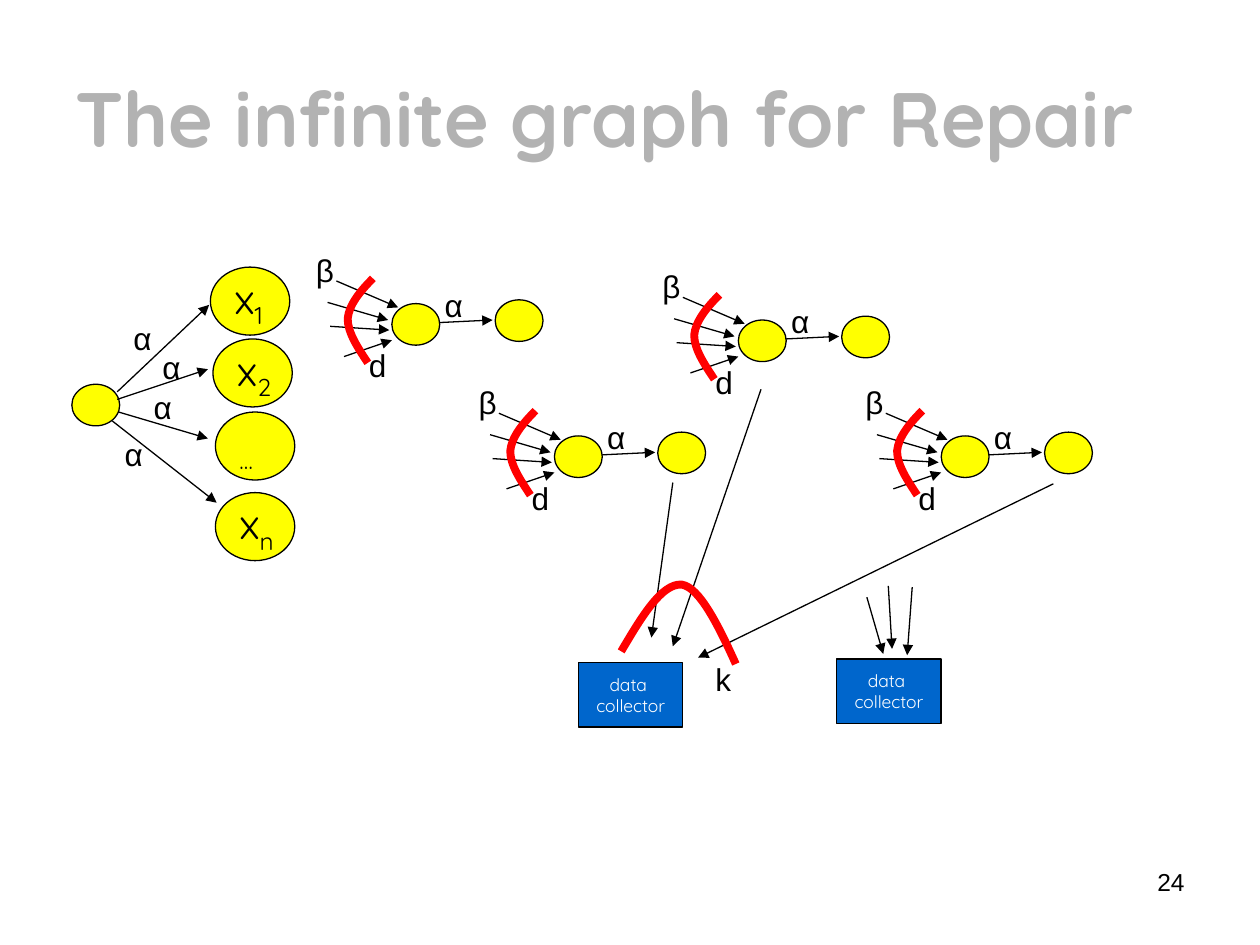
from lxml import etree
from pptx import Presentation
from pptx.dml.color import RGBColor
from pptx.enum.shapes import MSO_CONNECTOR, MSO_SHAPE
from pptx.enum.text import MSO_ANCHOR, PP_ALIGN
from pptx.oxml.ns import qn
from pptx.util import Inches, Pt

BLACK = RGBColor(0x00, 0x00, 0x00)
WHITE = RGBColor(0xFF, 0xFF, 0xFF)
GRAY = RGBColor(0xB2, 0xB2, 0xB2)
YELLOW = RGBColor(0xFF, 0xFF, 0x00)
RED = RGBColor(0xFF, 0x00, 0x00)
BLUE = RGBColor(0x00, 0x66, 0xCC)

NODE_SIZE = (0.38, 0.33)
VALUE_SIZE = (0.63, 0.54)
COLLECTOR_SIZE = (0.83, 0.51)


def add_text(slide, text, left, top, width=0.55, height=0.4, size=18,
             font="Arial", color=BLACK, bold=False, align=PP_ALIGN.LEFT,
             anchor=MSO_ANCHOR.TOP):
    box = slide.shapes.add_textbox(Inches(left), Inches(top), Inches(width), Inches(height))
    frame = box.text_frame
    frame.word_wrap = True
    frame.vertical_anchor = anchor
    paragraph = frame.paragraphs[0]
    paragraph.text = text
    paragraph.alignment = align
    style_font(paragraph.font, size, font, color)
    paragraph.font.bold = bold


def style_font(font, size, name, color):
    font.size = Pt(size)
    font.name = name
    font.color.rgb = color


def add_solid(slide, kind, left, top, size, fill):
    width, height = size
    shape = slide.shapes.add_shape(kind, Inches(left), Inches(top), Inches(width), Inches(height))
    shape.shadow.inherit = False
    shape.fill.solid()
    shape.fill.fore_color.rgb = fill
    shape.line.color.rgb = BLACK
    shape.line.width = Pt(0.75)
    shape.text_frame.word_wrap = False
    shape.text_frame.vertical_anchor = MSO_ANCHOR.MIDDLE
    return shape


def add_node(slide, left, top):
    add_solid(slide, MSO_SHAPE.OVAL, left, top, NODE_SIZE, YELLOW)


def add_value_node(slide, left, top, base, subscript):
    shape = add_solid(slide, MSO_SHAPE.OVAL, left, top, VALUE_SIZE, YELLOW)
    paragraph = shape.text_frame.paragraphs[0]
    paragraph.alignment = PP_ALIGN.LEFT
    style_font(paragraph.font, 24, "Quicksand", BLACK)
    if base:
        paragraph.add_run().text = base
    run = paragraph.add_run()
    run.text = subscript
    run._r.get_or_add_rPr().set("baseline", "-25000")


def add_arrow(slide, x1, y1, x2, y2):
    arrow = slide.shapes.add_connector(
        MSO_CONNECTOR.STRAIGHT, Inches(x1), Inches(y1), Inches(x2), Inches(y2))
    arrow.line.color.rgb = BLACK
    arrow.line.width = Pt(0.75)
    etree.SubElement(arrow.line._get_or_add_ln(), qn("a:tailEnd"), type="triangle")
    etree.SubElement(arrow._element.spPr, qn("a:effectLst"))


def add_arc(slide, points):
    """Draw a red Bezier curve: a start point, then three points per segment."""
    vertices = [(Inches(x), Inches(y)) for x, y in points]
    builder = slide.shapes.build_freeform(*vertices[0])
    builder.add_line_segments(vertices[1:], close=False)
    shape = builder.convert_to_shape()
    steps = shape._element.xpath(".//a:lnTo")
    for start in range(0, len(steps), 3):
        curve = etree.Element(qn("a:cubicBezTo"))
        steps[start].addprevious(curve)
        for step in steps[start:start + 3]:
            curve.append(step[0])
            step.getparent().remove(step)
    shape.shadow.inherit = False
    shape.fill.background()
    shape.line.color.rgb = RED
    shape.line.width = Pt(4.5)


def add_source_fan(slide, left, top):
    """Source node with an α arrow to each stored value."""
    for dx, dy, base, subscript in [(1.10, 0, "x", "1"), (1.12, 0.57, "x", "2"),
                                    (1.14, 1.15, "", "…"), (1.14, 1.79, "x", "n")]:
        add_value_node(slide, left + dx, top + dy, base, subscript)
    add_node(slide, left, top + 0.93)
    for x1, y1, x2, y2 in [(0.36, 0.99, 1.09, 0.30), (0.36, 1.05, 1.08, 0.81),
                           (0.37, 1.15, 1.08, 1.36), (0.32, 1.22, 1.15, 1.87)]:
        add_arrow(slide, left + x1, top + y1, left + x2, top + y2)
    for dx, dy in [(0.39, 0.36), (0.62, 0.59), (0.55, 0.91), (0.32, 1.28)]:
        add_text(slide, "α", left + dx, top + dy)


def add_repair_node(slide, left, top):
    """A node fed by d arrows of weight β, and its α arrow to a second node."""
    add_node(slide, left + 0.70, top + 0.47)
    add_node(slide, left + 1.52, top + 0.44)
    for x1, y1, x2, y2 in [(1.08, 0.62, 1.50, 0.60), (0.26, 0.29, 0.75, 0.50),
                           (0.19, 0.46, 0.67, 0.60), (0.21, 0.65, 0.68, 0.68),
                           (0.32, 0.89, 0.70, 0.76)]:
        add_arrow(slide, left + x1, top + y1, left + x2, top + y2)
    curve = [(0.55, 0.27), (0.45, 0.37), (0.36, 0.48), (0.35, 0.59),
             (0.35, 0.70), (0.43, 0.82), (0.51, 0.94)]
    add_arc(slide, [(left + x, top + y) for x, y in curve])
    add_text(slide, "β", left, top, width=0.33)
    add_text(slide, "α", left + 1.02, top + 0.28)
    add_text(slide, "d", left + 0.42, top + 0.76)


def add_collector(slide, left, top, arrows):
    """Data collector box with arrows given relative to its corner."""
    shape = add_solid(slide, MSO_SHAPE.RECTANGLE, left, top, COLLECTOR_SIZE, BLUE)
    shape.text_frame.text = "data \ncollector"
    for paragraph in shape.text_frame.paragraphs:
        paragraph.alignment = PP_ALIGN.CENTER
        style_font(paragraph.font, 10, "Quicksand", WHITE)
    for x1, y1, x2, y2 in arrows:
        add_arrow(slide, left + x1, top + y1, left + x2, top + y2)


def add_arc_over_collector(slide, left, top):
    curve = [(0.34, -0.09), (0.50, -0.36), (0.66, -0.63), (0.82, -0.62),
             (0.96, -0.60), (1.11, -0.30), (1.25, 0.01)]
    add_arc(slide, [(left + x, top + y) for x, y in curve])
    add_text(slide, "k", left + 0.99, top - 0.07)


def main():
    presentation = Presentation()
    presentation.slide_width = Inches(10)
    presentation.slide_height = Inches(7.5)
    slide = presentation.slides.add_slide(presentation.slide_layouts[6])

    add_text(slide, "24", 7.17, 6.83, 2.33, 0.52, size=14, align=PP_ALIGN.RIGHT)
    add_text(slide, "The infinite graph for Repair", 0.5, 0.3, 9, 1.25, size=44,
             font="Quicksand", color=GRAY, bold=True, anchor=MSO_ANCHOR.MIDDLE)
    add_source_fan(slide, 0.57, 2.12)
    for left, top in [(2.41, 1.94), (3.70, 2.99), (5.16, 2.07), (6.77, 2.99)]:
        add_repair_node(slide, left, top)
    add_collector(slide, 4.59, 5.26, [(0.75, -1.43, 0.58, -0.20),
                                      (1.45, -2.17, 0.75, -0.13),
                                      (3.77, -1.42, 0.95, -0.04)])
    add_arc_over_collector(slide, 4.59, 5.26)
    add_collector(slide, 6.64, 5.23, [(0.60, -0.57, 0.56, -0.03),
                                      (0.41, -0.58, 0.44, -0.08),
                                      (0.24, -0.49, 0.37, -0.04)])
    presentation.save("out.pptx")


if __name__ == "__main__":
    main()
